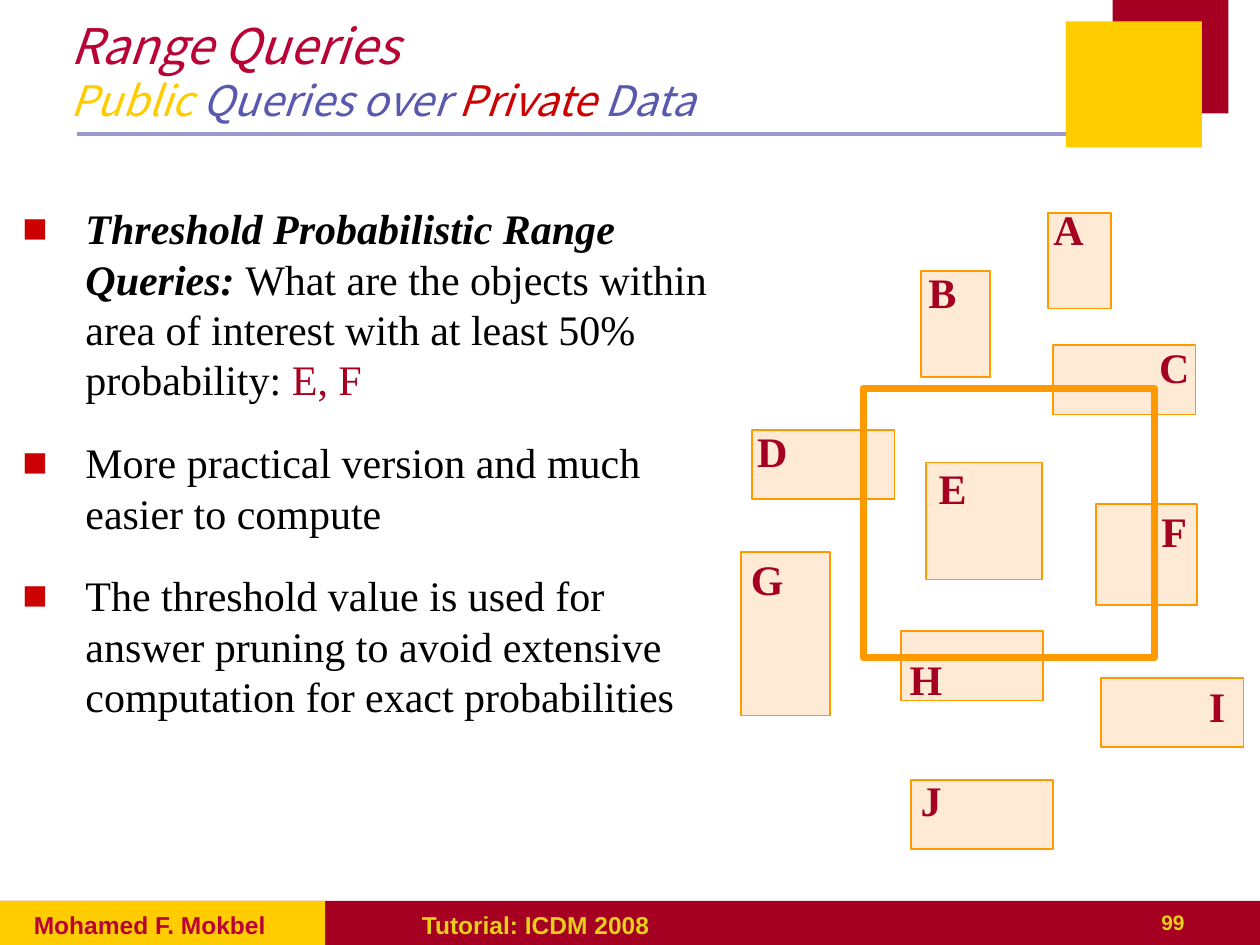
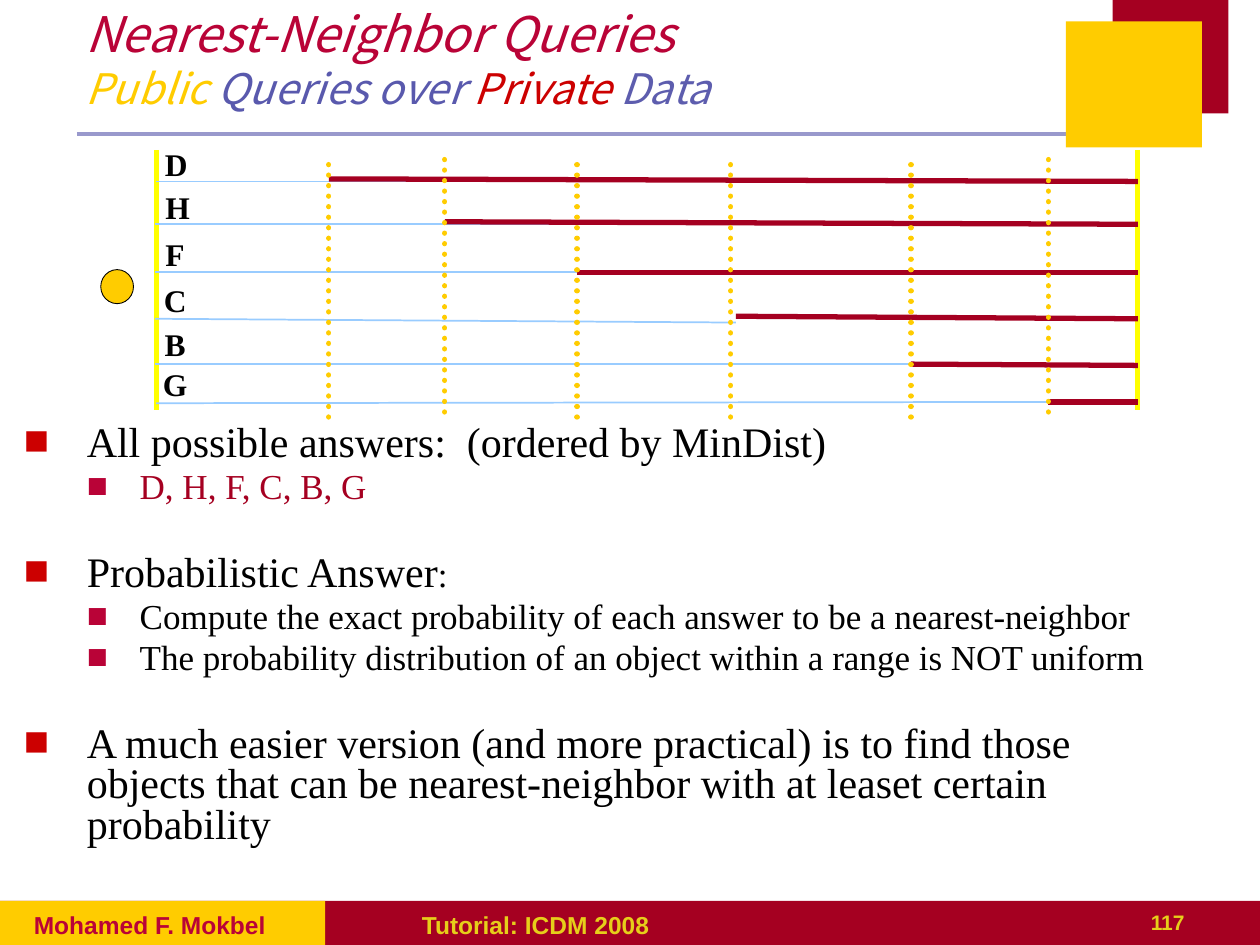
from collections import namedtuple

from lxml.etree import SubElement
from pptx import Presentation
from pptx.dml.color import RGBColor
from pptx.enum.dml import MSO_LINE
from pptx.enum.shapes import MSO_CONNECTOR, MSO_SHAPE
from pptx.enum.text import MSO_ANCHOR, PP_ALIGN
from pptx.oxml.ns import qn
from pptx.util import Inches, Pt

MAROON = RGBColor(0xA5, 0x00, 0x21)
CRIMSON = RGBColor(0xB9, 0x03, 0x37)
RED = RGBColor(0xCC, 0x00, 0x00)
GOLD = RGBColor(0xFF, 0xCC, 0x00)
FOOTER_GOLD = RGBColor(0xE6, 0xCE, 0x1A)
YELLOW = RGBColor(0xFF, 0xFF, 0x00)
ORANGE = RGBColor(0xFF, 0x99, 0x00)
PEACH = RGBColor(0xFF, 0xCC, 0x99)
LAVENDER = RGBColor(0x99, 0x99, 0xCC)
INDIGO = RGBColor(0x59, 0x59, 0xAD)
LIGHT_INDIGO = RGBColor(0x5D, 0x5D, 0xAE)
SKY = RGBColor(0x99, 0xCC, 0xFF)
BLACK = RGBColor(0x00, 0x00, 0x00)

TITLE_FONT = "Noto Sans CJK KR"
BODY_FONT = "Times New Roman"
FOOTER_FONT = "Arial"

Box = namedtuple("Box", "left top width height")
Words = namedtuple("Words", "text size color bold italic", defaults=(24, BLACK, False, False))
Bullet = namedtuple("Bullet", "level space_before words")
Region = namedtuple("Region", "name box label_left label_top")
Candidate = namedtuple(
    "Candidate", "name label_center label_top near_start near_end far_start far_end guide_left guide_top"
)

REGIONS = [
    Region("A", Box(2.48, 0.12, 0.50, 0.76), 2.39, 0),
    Region("B", Box(1.47, 0.58, 0.55, 0.84), 1.39, 0.50),
    Region("C", Box(2.52, 1.17, 1.13, 0.55), 3.23, 1.09),
    Region("D", Box(0.13, 1.84, 1.13, 0.55), 0.04, 1.76),
    Region("E", Box(1.51, 2.10, 0.92, 0.93), 1.47, 2.05),
    Region("F", Box(2.86, 2.43, 0.80, 0.80), 3.23, 2.39),
    Region("G", Box(0.04, 2.81, 0.71, 1.30), 0, 2.77),
    Region("H", Box(1.31, 3.44, 1.13, 0.55), 1.26, 3.57),
    Region("I", Box(2.90, 3.81, 1.13, 0.55), 3.57, 3.78),
    Region("J", Box(1.39, 4.62, 1.13, 0.55), 1.30, 4.53),
]
AREA_OF_INTEREST = Box(1.01, 1.51, 2.31, 2.14)

CANDIDATES = [
    Candidate("D", 0.60, 0, (0.44, 0.34), (2.85, 0.34), (1.81, 0.32), (8.23, 0.34), 1.81, 0.15),
    Candidate("H", 0.61, 0.34, (0.43, 0.68), (3.78, 0.68), (2.73, 0.66), (8.23, 0.68), 2.73, 0.11),
    Candidate("F", 0.59, 0.72, (0.43, 1.06), (3.78, 1.06), (3.78, 1.06), (8.23, 1.06), 3.78, 0.15),
    Candidate("C", 0.59, 1.08, (0.43, 1.43), (5.04, 1.46), (5.04, 1.41), (8.23, 1.43), 5.00, 0.15),
    Candidate("B", 0.59, 1.43, (0.43, 1.79), (6.47, 1.79), (6.43, 1.79), (8.23, 1.80), 6.43, 0.15),
    Candidate("G", 0.59, 1.75, (0.44, 2.10), (7.60, 2.09), (7.52, 2.09), (8.23, 2.09), 7.52, 0.11),
]
GUIDE_LENGTH = 2.06

RANGE_BULLETS = [
    Bullet(0, 0, [
        Words("Threshold Probabilistic Range Queries: ", bold=True, italic=True),
        Words("What are the objects within area of interest with at least 50% probability: "),
        Words("E, F", color=MAROON),
    ]),
    Bullet(0, 18.5, [Words("More practical version and much easier to compute")]),
    Bullet(0, 18.5, [Words(
        "The threshold value is used for answer pruning to avoid extensive "
        "computation for exact probabilities"
    )]),
]
NEIGHBOR_BULLETS = [
    Bullet(0, 0, [Words("All possible answers:  (ordered by MinDist)")]),
    Bullet(1, 4, [Words("D, H, F, C, B, G", 20, MAROON)]),
    Bullet(0, 28, [Words("Probabilistic Answer"), Words(":", 20)]),
    Bullet(1, 4, [Words("Compute the exact probability of each answer to be a nearest-neighbor", 20)]),
    Bullet(1, 4, [Words("The probability distribution of an object within a range is NOT uniform", 20)]),
    Bullet(0, 28, [Words(
        "A much easier version (and more practical) is to find those objects that can be "
        "nearest-neighbor with at leaset certain probability"
    )]),
]
BULLET_STYLES = [(0.5, -0.5, RED), (0.92, -0.42, CRIMSON)]


def inside(box, part):
    return Box(box.left + part.left, box.top + part.top, part.width, part.height)


def add_block(slide, box, fill=None, line=None, line_width=1, kind=MSO_SHAPE.RECTANGLE):
    shape = slide.shapes.add_shape(kind, *map(Inches, box))
    shape.shadow.inherit = False
    if fill is None:
        shape.fill.background()
    else:
        shape.fill.solid()
        shape.fill.fore_color.rgb = fill
    if line is None:
        shape.line.fill.background()
    else:
        shape.line.color.rgb = line
        shape.line.width = Pt(line_width)
    return shape


def add_line(slide, box, start, end, color, width):
    connector = slide.shapes.add_connector(
        MSO_CONNECTOR.STRAIGHT,
        Inches(box.left + start[0]), Inches(box.top + start[1]),
        Inches(box.left + end[0]), Inches(box.top + end[1]),
    )
    connector.line.color.rgb = color
    connector.line.width = Pt(width)
    SubElement(connector.element.spPr, qn("a:effectLst"))
    return connector


def add_words(paragraph, words, font_name):
    run = paragraph.add_run()
    run.text = words.text
    run.font.name = font_name
    run.font.size = Pt(words.size)
    run.font.color.rgb = words.color
    run.font.bold = words.bold
    run.font.italic = words.italic


def write_line(shape, words, font_name, alignment=PP_ALIGN.LEFT):
    shape.text_frame.word_wrap = True
    shape.text_frame.vertical_anchor = MSO_ANCHOR.TOP
    paragraph = shape.text_frame.paragraphs[0]
    paragraph.alignment = alignment
    add_words(paragraph, words, font_name)


def add_label(slide, box, words, font_name=BODY_FONT, alignment=PP_ALIGN.CENTER):
    write_line(slide.shapes.add_textbox(*map(Inches, box)), words, font_name, alignment)


def add_corner(slide, box):
    add_line(slide, box, (-7.85, 1.06), (0.07, 1.06), LAVENDER, 2.25)
    add_block(slide, inside(box, Box(0.37, 0, 0.92, 0.90)), MAROON)
    add_block(slide, inside(box, Box(0, 0.17, 1.08, 1)), GOLD)


def add_footer(slide, box, number):
    add_block(slide, box, MAROON)
    add_block(slide, box._replace(width=2.58), GOLD)
    add_label(slide, inside(box, Box(7.42, 0.02, 2.08, 0.33)),
              Words(str(number), 12, FOOTER_GOLD, True), FOOTER_FONT, PP_ALIGN.RIGHT)
    add_label(slide, inside(box, Box(3.25, 0.02, 4.67, 0.33)),
              Words("Tutorial: ICDM 2008", 14, FOOTER_GOLD, True), FOOTER_FONT, PP_ALIGN.LEFT)
    author = add_block(slide, inside(box, Box(0.17, 0.02, 2.33, 0.25)), GOLD)
    write_line(author, Words("Mohamed F. Mokbel", 14, CRIMSON, True), FOOTER_FONT)


def add_title(slide, box, heading, last_color):
    text_frame = slide.shapes.add_textbox(*map(Inches, box)).text_frame
    text_frame.word_wrap = True
    text_frame.vertical_anchor = MSO_ANCHOR.MIDDLE
    paragraph = text_frame.paragraphs[0]
    add_words(paragraph, Words(heading, 28, CRIMSON, italic=True), TITLE_FONT)
    paragraph.add_line_break()
    subtitle = [("Public ", GOLD), ("Queries over ", INDIGO), ("Private ", RED), ("Data", last_color)]
    for text, color in subtitle:
        add_words(paragraph, Words(text, 24, color, italic=True), TITLE_FONT)


def set_bullet(paragraph, level):
    margin, indent, color = BULLET_STYLES[level]
    properties = paragraph._p.get_or_add_pPr()
    properties.set("marL", str(Inches(margin)))
    properties.set("indent", str(Inches(indent)))
    bullet_color = SubElement(properties, qn("a:buClr"))
    SubElement(bullet_color, qn("a:srgbClr"), val=str(color))
    SubElement(properties, qn("a:buFont"), typeface=BODY_FONT)
    SubElement(properties, qn("a:buChar"), char="■")
    paragraph.level = level


def add_bullets(slide, box, bullets, line_spacing):
    text_frame = slide.shapes.add_textbox(*map(Inches, box)).text_frame
    text_frame.word_wrap = True
    for index, bullet in enumerate(bullets):
        paragraph = text_frame.add_paragraph() if index else text_frame.paragraphs[0]
        set_bullet(paragraph, bullet.level)
        paragraph.line_spacing = line_spacing
        paragraph.space_before = Pt(bullet.space_before)
        for words in bullet.words:
            add_words(paragraph, words, BODY_FONT)


def add_region_map(slide, box):
    for region in REGIONS:
        shape = add_block(slide, inside(box, region.box), PEACH, ORANGE)
        color = shape.element.spPr.find(qn("a:solidFill"))[0]
        SubElement(color, qn("a:alpha"), val="40000")
    add_block(slide, inside(box, AREA_OF_INTEREST), line=ORANGE, line_width=4)
    for region in REGIONS:
        label_box = Box(region.label_left, region.label_top, 0.5, 0.5)
        add_label(slide, inside(box, label_box), Words(region.name, 24, MAROON, True))


def add_distance_chart(slide, box):
    add_block(slide, inside(box, Box(0, 1.04, 0.26, 0.27)), GOLD, BLACK, 0.5, MSO_SHAPE.OVAL)
    for boundary in (0.44, box.width):
        add_line(slide, box, (boundary, 0.09), (boundary, 0.09 + GUIDE_LENGTH), YELLOW, 3)
    for candidate in CANDIDATES:
        add_line(slide, box, candidate.near_start, candidate.near_end, SKY, 1)
        label_box = Box(candidate.label_center - 0.42, candidate.label_top, 0.84, 0.4)
        add_label(slide, inside(box, label_box), Words(candidate.name, 18, bold=True))
    for candidate in CANDIDATES:
        add_line(slide, box, candidate.far_start, candidate.far_end, MAROON, 3)
    for candidate in CANDIDATES:
        left, top = candidate.guide_left, candidate.guide_top
        guide = add_line(slide, box, (left, top + GUIDE_LENGTH), (left, top), GOLD, 3)
        guide.line.dash_style = MSO_LINE.ROUND_DOT
        guide.line._get_or_add_ln().set("cap", "rnd")


def add_base_slide(presentation, number):
    slide = presentation.slides.add_slide(presentation.slide_layouts[6])
    add_corner(slide, Box(8.46, 0, 1.29, 1.17))
    add_footer(slide, Box(0, 7.15, 10, 0.35), number)
    return slide


def add_range_slide(presentation):
    slide = add_base_slide(presentation, 99)
    add_title(slide, Box(0.46, 0.14, 7.67, 0.83), "Range Queries", INDIGO)
    add_region_map(slide, Box(5.84, 1.57, 4.07, 5.17))
    add_bullets(slide, Box(0.08, 1.56, 5.84, 5.38), RANGE_BULLETS, 1.0)


def add_neighbor_slide(presentation):
    slide = add_base_slide(presentation, 117)
    add_title(slide, Box(0.58, 0.05, 7.67, 0.83), "Nearest-Neighbor Queries", LIGHT_INDIGO)
    add_bullets(slide, Box(0.09, 3.33, 9.28, 3.7), NEIGHBOR_BULLETS, 0.8)
    add_distance_chart(slide, Box(0.8, 1.1, 8.23, 2.21))


def main():
    presentation = Presentation()
    presentation.slide_width = Inches(10)
    presentation.slide_height = Inches(7.5)
    add_range_slide(presentation)
    add_neighbor_slide(presentation)
    presentation.save("out.pptx")


if __name__ == "__main__":
    main()
